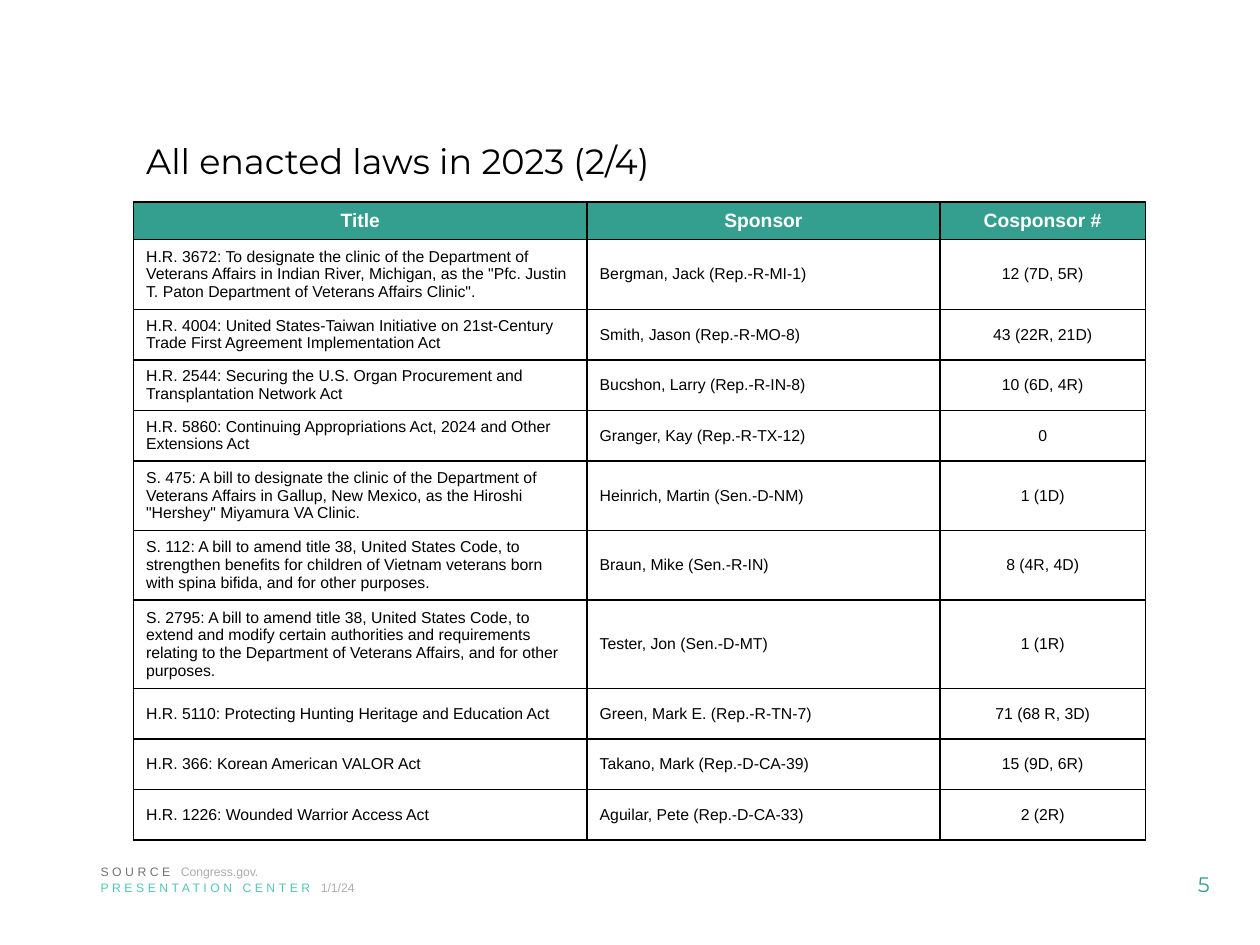
from typing import NamedTuple

from lxml.etree import SubElement
from pptx import Presentation
from pptx.dml.color import RGBColor
from pptx.enum.text import MSO_ANCHOR, MSO_AUTO_SIZE, PP_ALIGN
from pptx.oxml.ns import qn
from pptx.util import Pt

BLACK = RGBColor(0x00, 0x00, 0x00)
WHITE = RGBColor(0xFF, 0xFF, 0xFF)
TEAL = RGBColor(0x35, 0x9F, 0x8F)
LIGHT_TEAL = RGBColor(0x55, 0xC6, 0xB5)
DARK_GREY = RGBColor(0x76, 0x71, 0x71)
LIGHT_GREY = RGBColor(0xAF, 0xAB, 0xAB)

HEADING_FONT = "Montserrat"
BODY_FONT = "Arial"
CONTENT_LEFT = 76.3
CONTENT_WIDTH = 578.2
HEADER_HEIGHT = 21.6
LAW_HEIGHT = 28.9
BORDER_WIDTH = 1


class Law(NamedTuple):
    title: str
    sponsor: str
    cosponsors: str


class Column(NamedTuple):
    heading: str
    width: float
    align: PP_ALIGN


class FooterLine(NamedTuple):
    label: str
    label_color: RGBColor
    detail: str
    top: float
    width: float


COLUMNS = [
    Column("Title", 259.2, PP_ALIGN.LEFT),
    Column("Sponsor", 201.6, PP_ALIGN.LEFT),
    Column("Cosponsor #", 117.4, PP_ALIGN.CENTER),
]

LAWS = [
    Law("H.R. 3672: To designate the clinic of the Department of Veterans Affairs in "
        "Indian River, Michigan, as the \"Pfc. Justin T. Paton Department of Veterans "
        "Affairs Clinic\".", "Bergman, Jack (Rep.-R-MI-1)", "12 (7D, 5R)"),
    Law("H.R. 4004: United States-Taiwan Initiative on 21st-Century Trade First "
        "Agreement Implementation Act", "Smith, Jason (Rep.-R-MO-8)", "43 (22R, 21D)"),
    Law("H.R. 2544: Securing the U.S. Organ Procurement and Transplantation Network Act",
        "Bucshon, Larry (Rep.-R-IN-8)", "10 (6D, 4R)"),
    Law("H.R. 5860: Continuing Appropriations Act, 2024 and Other Extensions Act",
        "Granger, Kay (Rep.-R-TX-12)", "0"),
    Law("S. 475: A bill to designate the clinic of the Department of Veterans Affairs in "
        "Gallup, New Mexico, as the Hiroshi \"Hershey\" Miyamura VA Clinic.",
        "Heinrich, Martin (Sen.-D-NM)", "1 (1D)"),
    Law("S. 112: A bill to amend title 38, United States Code, to strengthen benefits for "
        "children of Vietnam veterans born with spina bifida, and for other purposes.",
        "Braun, Mike (Sen.-R-IN)", "8 (4R, 4D)"),
    Law("S. 2795: A bill to amend title 38, United States Code, to extend and modify "
        "certain authorities and requirements relating to the Department of Veterans "
        "Affairs, and for other purposes.", "Tester, Jon (Sen.-D-MT)", "1 (1R)"),
    Law("H.R. 5110: Protecting Hunting Heritage and Education Act",
        "Green, Mark E. (Rep.-R-TN-7)", "71 (68 R, 3D)"),
    Law("H.R. 366: Korean American VALOR Act", "Takano, Mark (Rep.-D-CA-39)", "15 (9D, 6R)"),
    Law("H.R. 1226: Wounded Warrior Access Act", "Aguilar, Pete (Rep.-D-CA-33)", "2 (2R)"),
]

FOOTER_LINES = [
    FooterLine("PRESENTATION CENTER ", LIGHT_TEAL, "1/1/24", 499.7, 211.7),
    FooterLine("SOURCE ", DARK_GREY, "Congress.gov.", 490.3, 483.1),
]


def add_run(paragraph, text: str, size: float, color: RGBColor,
            font: str = BODY_FONT, bold: bool = False, spacing: float = 0) -> None:
    run = paragraph.add_run()
    run.text = text
    run.font.size = Pt(size)
    run.font.name = font
    run.font.bold = bold
    run.font.color.rgb = color
    if spacing:
        run.font._element.set("spc", str(int(spacing * 100)))


def add_borders(cell) -> None:
    properties = cell._tc.get_or_add_tcPr()
    for position, side in enumerate(("lnL", "lnR", "lnT", "lnB")):
        border = SubElement(properties, qn(f"a:{side}"), w=str(Pt(BORDER_WIDTH)))
        fill = SubElement(border, qn("a:solidFill"))
        SubElement(fill, qn("a:srgbClr"), val=str(BLACK))
        properties.insert(position, border)


def fill_cell(cell, text: str, align: PP_ALIGN, heading: bool) -> None:
    cell.vertical_anchor = MSO_ANCHOR.MIDDLE
    if heading:
        cell.fill.solid()
        cell.fill.fore_color.rgb = TEAL
    else:
        cell.fill.background()
    paragraph = cell.text_frame.paragraphs[0]
    paragraph.alignment = align
    add_run(paragraph, text, 11 if heading else 9, WHITE if heading else BLACK, bold=heading)
    add_borders(cell)


def set_title(slide, text: str) -> None:
    title = slide.shapes.title
    title.left, title.top = Pt(CONTENT_LEFT), Pt(64.8)
    title.width, title.height = Pt(CONTENT_WIDTH), Pt(56.9)
    frame = title.text_frame
    frame.vertical_anchor = MSO_ANCHOR.MIDDLE
    frame.auto_size = MSO_AUTO_SIZE.NONE
    paragraph = frame.paragraphs[0]
    paragraph.alignment = PP_ALIGN.LEFT
    paragraph.line_spacing = 0.9
    add_run(paragraph, text, 20, BLACK, HEADING_FONT)


def add_page_number(slide, number: str) -> None:
    frame = slide.shapes.add_textbox(Pt(655.9), Pt(491), Pt(64.1), Pt(28.8)).text_frame
    frame.word_wrap = True
    frame.vertical_anchor = MSO_ANCHOR.MIDDLE
    paragraph = frame.paragraphs[0]
    paragraph.alignment = PP_ALIGN.CENTER
    add_run(paragraph, number, 12, TEAL, HEADING_FONT)


def add_law_table(slide, laws: list[Law]) -> None:
    table = slide.shapes.add_table(
        len(laws) + 1, len(COLUMNS), Pt(CONTENT_LEFT), Pt(115.4), Pt(CONTENT_WIDTH),
        Pt(HEADER_HEIGHT + LAW_HEIGHT * len(laws))).table
    table.horz_banding = False
    table.rows[0].height = Pt(HEADER_HEIGHT)
    for index, column in enumerate(COLUMNS):
        table.columns[index].width = Pt(column.width)
        fill_cell(table.cell(0, index), column.heading, PP_ALIGN.CENTER, True)
    for row, law in enumerate(laws, start=1):
        table.rows[row].height = Pt(LAW_HEIGHT)
        for index, (column, text) in enumerate(zip(COLUMNS, law)):
            fill_cell(table.cell(row, index), text, column.align, False)


def add_footer_line(slide, line: FooterLine) -> None:
    frame = slide.shapes.add_textbox(
        Pt(50.4), Pt(line.top), Pt(line.width), Pt(15.8)).text_frame
    frame.word_wrap = True
    frame.auto_size = MSO_AUTO_SIZE.SHAPE_TO_FIT_TEXT
    paragraph = frame.paragraphs[0]
    add_run(paragraph, line.label, 7, line.label_color, spacing=2)
    add_run(paragraph, line.detail, 7, LIGHT_GREY)


def main() -> None:
    presentation = Presentation()
    presentation.slide_width, presentation.slide_height = Pt(720), Pt(540)
    slide = presentation.slides.add_slide(presentation.slide_layouts[5])
    add_page_number(slide, "5")
    set_title(slide, "All enacted laws in 2023 (2/4)")
    add_law_table(slide, LAWS)
    for line in FOOTER_LINES:
        add_footer_line(slide, line)
    presentation.save("out.pptx")


if __name__ == "__main__":
    main()
